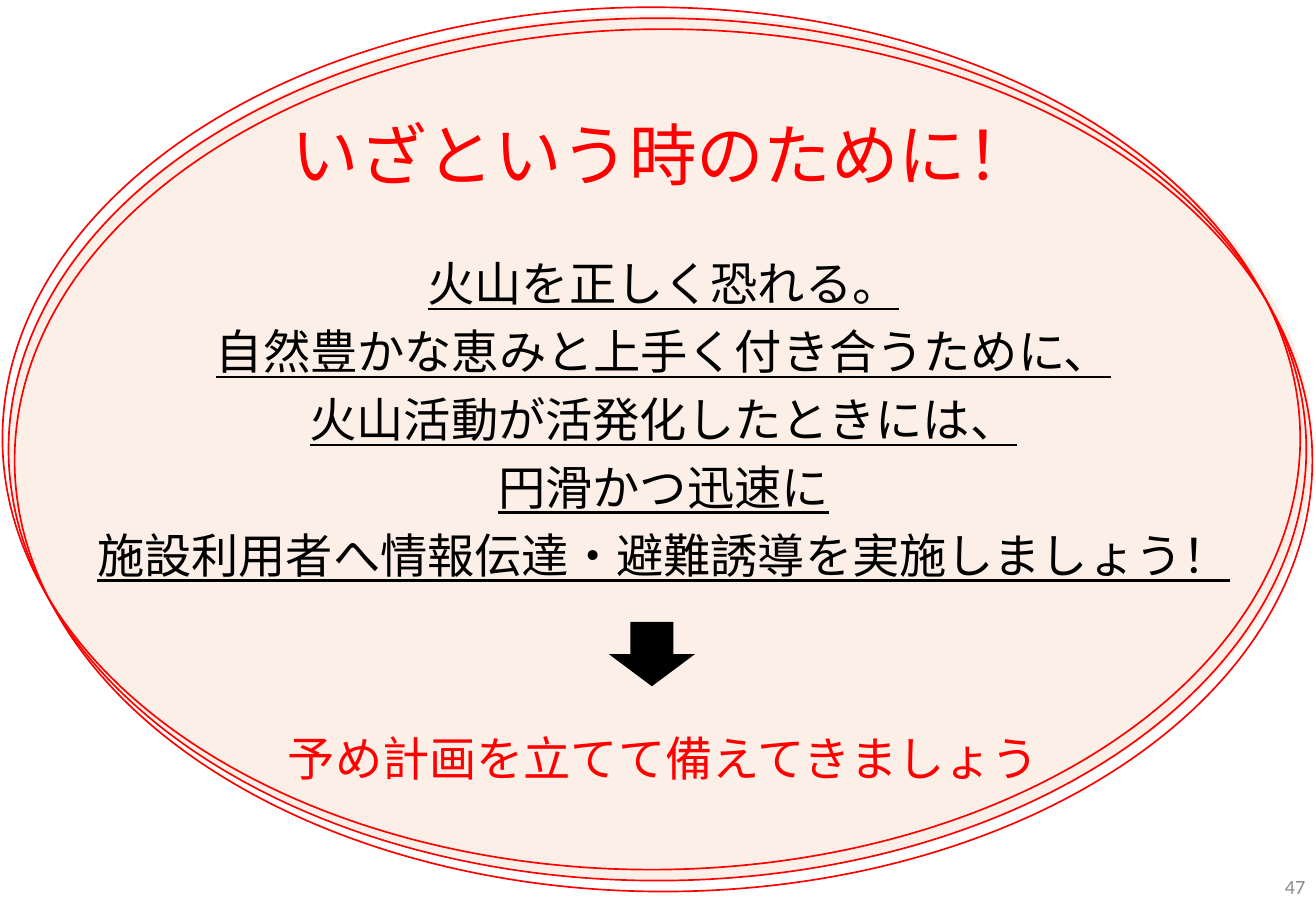
import pptx
import pptx.dml.color
import pptx.enum.shapes
import pptx.enum.text
import pptx.oxml
import pptx.oxml.ns
import pptx.util
from pptx.util import Inches

SHAPE = pptx.enum.shapes.MSO_SHAPE
ALIGN = pptx.enum.text.PP_ALIGN
ANCHOR = pptx.enum.text.MSO_ANCHOR
JAPANESE = "Noto Sans CJK JP"
LATIN = "Calibri"
RED = "FF0000"
BLACK = "000000"


def rgb(color):
    return pptx.dml.color.RGBColor.from_string(color)


def sub_element(parent, tag, **attrs):
    child = pptx.oxml.parse_xml(f"<{tag} {pptx.oxml.ns.nsdecls('a')}/>")
    for name, value in attrs.items():
        child.set(name, value)
    parent.append(child)


class SlideBuilder:
    def __init__(self, slide):
        self.slide = slide

    def shape(self, kind, box, fill=None, opacity=None, line=None):
        sp = self.slide.shapes.add_shape(kind, *map(Inches, box))
        sp.shadow.inherit = False
        if fill:
            sp.fill.solid()
            sp.fill.fore_color.rgb = rgb(fill)
        else:
            sp.fill.background()
        if opacity:
            color = sp.fill._xPr.find(".//" + pptx.oxml.ns.qn("a:srgbClr"))
            sub_element(color, "a:alpha", val=str(opacity * 1000))
        if line:
            sp.line.color.rgb = rgb(line)
            sp.line.width = pptx.util.Pt(1)
        else:
            sp.line.fill.background()

    def text(self, box, lines, size, color, font=JAPANESE, align=ALIGN.CENTER,
             anchor=ANCHOR.TOP, underline=False):
        tf = self.slide.shapes.add_textbox(*map(Inches, box)).text_frame
        tf.word_wrap = True
        tf.vertical_anchor = anchor
        tf.text = "\n".join(lines)
        for p in tf.paragraphs:
            p.alignment = align
            self.style(p, size, color, font, underline)
        return tf

    def style(self, p, size, color, font, underline=False):
        for r in p.runs:
            r.font.size = pptx.util.Pt(size)
            r.font.color.rgb = rgb(color)
            r.font.name = font
            r.font.underline = underline
            sub_element(r.font._element, "a:ea", typeface=JAPANESE)

    def spacing(self, p, before):
        p.line_spacing = 0.9
        p.space_before = pptx.util.Pt(before)


def main():
    prs = pptx.Presentation()
    prs.slide_width, prs.slide_height = Inches(10.83), Inches(7.5)
    s = SlideBuilder(prs.slides.add_slide(prs.slide_layouts[6]))

    s.shape(SHAPE.OVAL, (0.07, 0.12, 10.73, 7.12), fill="F8CBAD", opacity=29)

    message = [
        "火山を正しく恐れる。",
        "自然豊かな恵みと上手く付き合うために、",
        "火山活動が活発化したときには、",
        "円滑かつ迅速に",
        "施設利用者へ情報伝達・避難誘導を実施しましょう！",
    ]
    tf = s.text((0.57, 2.1, 9.78, 4.92), message, 28, BLACK, LATIN, underline=True)
    for p in tf.paragraphs:
        s.spacing(p, 10)
    p = tf.add_paragraph()
    p.text = "予め計画を立てて備えてきましょう"
    p.alignment = ALIGN.CENTER
    s.style(p, 28, RED, JAPANESE)
    s.spacing(p, 90)

    s.text((2.22, 0.88, 6.47, 0.77), ["いざという時のために！"], 40, RED)

    for left, top in ((0.07, 0.15), (0.12, 0.24), (0.02, 0.06)):
        s.shape(SHAPE.OVAL, (left, top, 10.68, 7.1), line=RED)
    s.shape(SHAPE.DOWN_ARROW, (5.01, 5.12, 0.71, 0.53), fill=BLACK)

    s.text((8.4, 7.1, 2.44, 0.4), ["47"], 12, "8C8C8C", LATIN,
           align=ALIGN.RIGHT, anchor=ANCHOR.MIDDLE)
    prs.save("out.pptx")


if __name__ == "__main__":
    main()
